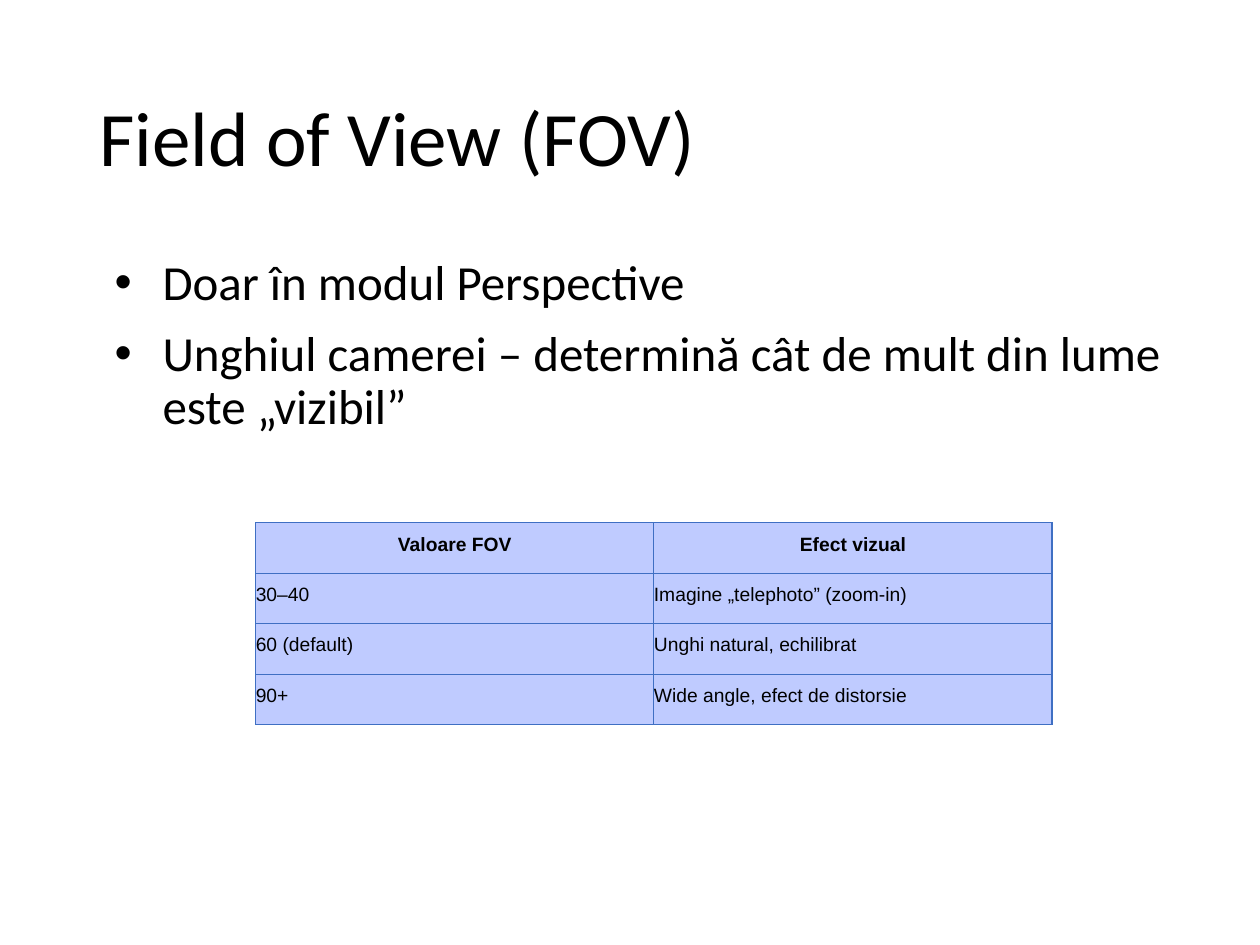
from dataclasses import dataclass

from lxml.etree import SubElement
from pptx import Presentation
from pptx.dml.color import RGBColor
from pptx.enum.text import MSO_ANCHOR, MSO_AUTO_SIZE, PP_ALIGN
from pptx.oxml.ns import qn
from pptx.util import Inches, Pt


@dataclass(frozen=True)
class Theme:
    ink: str = "000000"
    cell: str = "BFCBFF"
    border: str = "3F6FC3"
    text_font: str = "Calibri"
    table_font: str = "Arial"
    title_size: int = 44
    body_size: int = 28
    table_size: int = 11
    border_width: float = 0.75


THEME = Theme()
WIDTH, HEIGHT = Inches(10), Inches(7.5)
TITLE_BOX = (0.69, 0.4, 8.62, 1.45)
BODY_BOX = (0.69, 2, 8.62, 4.76)
TABLE_BOX = (2.03, 4.15, 6.32, 1.6)

TITLE = "Field of View (FOV)"
POINTS = [
    "Doar în modul Perspective",
    "Unghiul camerei – determină cât de mult din lume este „vizibil”",
]
FOV_ROWS = [
    ("Valoare FOV", "Efect vizual"),
    ("30–40", "Imagine „telephoto” (zoom-in)"),
    ("60 (default)", "Unghi natural, echilibrat"),
    ("90+", "Wide angle, efect de distorsie"),
]


def style(para, name, size, spacing, align, bold=False):
    para.font.name = name
    para.font.size = Pt(size)
    para.font.bold = bold
    para.font.color.rgb = RGBColor.from_string(THEME.ink)
    para.line_spacing = spacing
    para.alignment = align


def place(shape, box, anchor):
    shape.left, shape.top, shape.width, shape.height = map(Inches, box)
    frame = shape.text_frame
    frame.word_wrap = True
    frame.auto_size = MSO_AUTO_SIZE.NONE
    frame.vertical_anchor = anchor
    return frame


def add_bullet(para):
    props = para._p.get_or_add_pPr()
    props.set("marL", str(Inches(0.5)))
    props.set("indent", str(Inches(-0.38)))
    SubElement(props, qn("a:buFont"), typeface=THEME.table_font)
    SubElement(props, qn("a:buChar"), char="•")


def fill_title(page, box):
    frame = place(page.shapes.title, box, MSO_ANCHOR.MIDDLE)
    frame.text = TITLE
    style(frame.paragraphs[0], THEME.text_font, THEME.title_size, 0.9, PP_ALIGN.LEFT)


def fill_body(page, box):
    frame = place(page.placeholders[1], box, MSO_ANCHOR.TOP)
    frame.text = "\n".join(POINTS)
    for para in frame.paragraphs:
        style(para, THEME.text_font, THEME.body_size, 0.9, PP_ALIGN.LEFT)
        para.space_before = Pt(10)
        add_bullet(para)


def add_borders(cell):
    props = cell._tc.get_or_add_tcPr()
    for side in ("L", "R", "T", "B"):
        line = SubElement(props, qn(f"a:ln{side}"), w=str(Pt(THEME.border_width)))
        SubElement(SubElement(line, qn("a:solidFill")), qn("a:srgbClr"), val=THEME.border)


def format_cell(cell, text, is_header):
    cell.text = text
    cell.margin_left = cell.margin_right = cell.margin_top = cell.margin_bottom = 0
    align = PP_ALIGN.CENTER if is_header else PP_ALIGN.JUSTIFY
    style(cell.text_frame.paragraphs[0], THEME.table_font, THEME.table_size, 1.5, align, is_header)
    add_borders(cell)
    cell.fill.solid()
    cell.fill.fore_color.rgb = RGBColor.from_string(THEME.cell)


def add_fov_table(page, box):
    table = page.shapes.add_table(len(FOV_ROWS), len(FOV_ROWS[0]), *map(Inches, box)).table
    for row, texts in enumerate(FOV_ROWS):
        for column, text in enumerate(texts):
            format_cell(table.cell(row, column), text, is_header=row == 0)


def main():
    deck = Presentation()
    deck.slide_width, deck.slide_height = WIDTH, HEIGHT
    page = deck.slides.add_slide(deck.slide_layouts[1])
    fill_title(page, TITLE_BOX)
    fill_body(page, BODY_BOX)
    add_fov_table(page, TABLE_BOX)
    deck.save("out.pptx")


if __name__ == "__main__":
    main()
